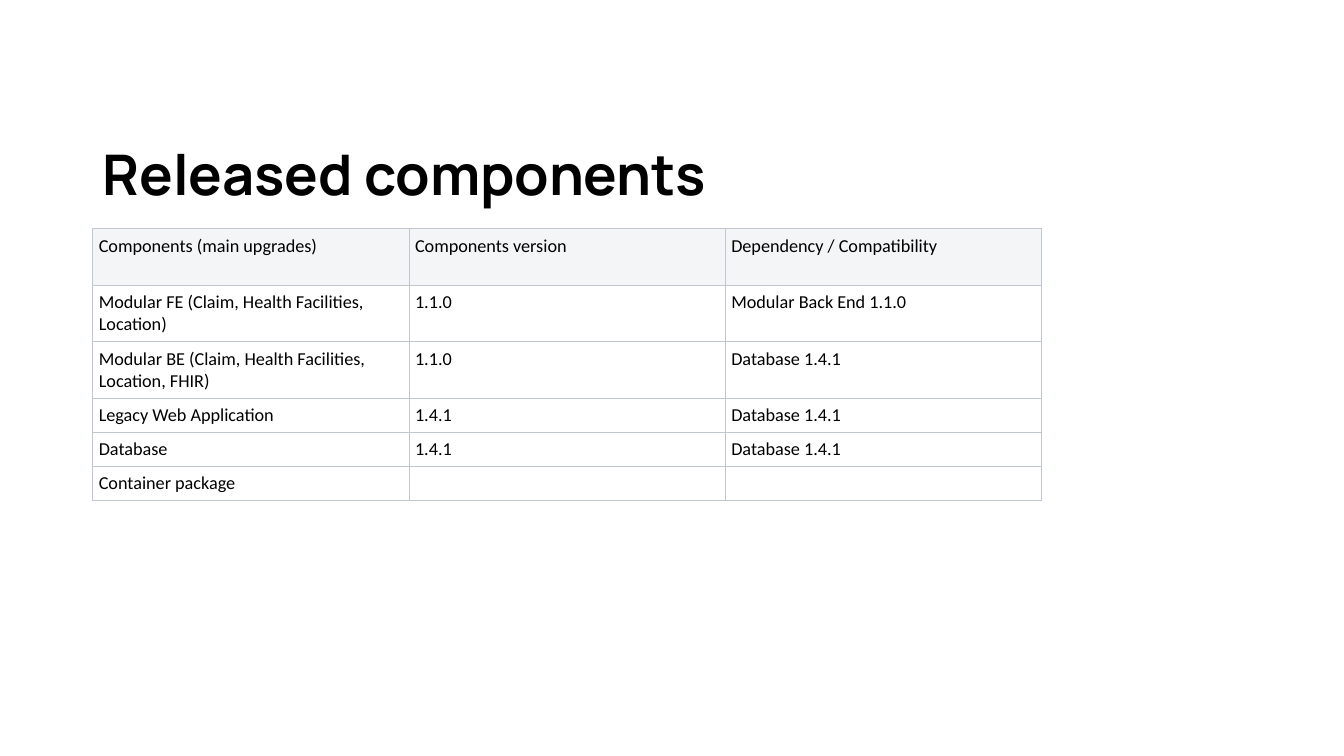
from lxml import etree
from pptx import Presentation
from pptx.dml.color import RGBColor as RGB
from pptx.enum.text import MSO_ANCHOR as Anchor
from pptx.oxml import parse_xml
from pptx.oxml.ns import nsdecls, qn
from pptx.util import Inches, Pt

COLORS = {"text": "000000", "header": "F4F5F7", "border": "C1C7D0"}

ROWS = [
    ("Components (main upgrades)", "Components version", "Dependency / Compatibility"),
    ("Modular FE (Claim, Health Facilities, Location)", "1.1.0", "Modular Back End 1.1.0"),
    ("Modular BE (Claim, Health Facilities, Location, FHIR)", "1.1.0", "Database 1.4.1"),
    ("Legacy Web Application", "1.4.1", "Database 1.4.1"),
    ("Database", "1.4.1", "Database 1.4.1"),
    ("Container package", "", ""),
]
TALL_ROWS, TALL, SHORT = 3, 0.56, 0.34


def write(tf, text, font="Calibri", size=13, bold=False, spacing=None):
    p = tf.paragraphs[0]
    if spacing:
        p.line_spacing = spacing
    if not text:
        # An empty cell keeps the text size so its row stays short
        etree.SubElement(p._p, qn("a:endParaRPr"), sz=str(size * 100))
        return
    r = p.add_run()
    r.text = text
    r.font.name, r.font.size, r.font.bold = font, Pt(size), bold
    r.font.color.rgb = RGB.from_string(COLORS["text"])


def add_borders(cell, color, width=0.75):
    tc_pr = cell._tc.get_or_add_tcPr()
    for side in "LRTB":
        tc_pr.append(parse_xml(
            f'<a:ln{side} {nsdecls("a")} w="{Pt(width)}"><a:solidFill>'
            f'<a:srgbClr val="{color}"/></a:solidFill></a:ln{side}>'))


# Title
def add_title(s, x, y, w, h):
    tf = s.shapes.add_textbox(Inches(x), Inches(y), Inches(w), Inches(h)).text_frame
    tf.word_wrap = True
    tf.vertical_anchor = Anchor.MIDDLE
    write(tf, "Released components", font="Manrope", size=40, bold=True, spacing=0.9)


# Components table
def add_components_table(s, x, y, w):
    heights = [TALL if i < TALL_ROWS else SHORT for i in range(len(ROWS))]
    frame = s.shapes.add_table(len(ROWS), len(ROWS[0]), Inches(x), Inches(y),
                               Inches(w), Inches(sum(heights)))
    table = frame.table
    table.horz_banding = table.first_row = False
    for row, height in zip(table.rows, heights):
        row.height = Inches(height)
    for i, texts in enumerate(ROWS):
        for j, text in enumerate(texts):
            cell = table.cell(i, j)
            cell.margin_left = cell.margin_right = Inches(0.06)
            cell.margin_top = cell.margin_bottom = Inches(0.06)
            add_borders(cell, COLORS["border"])
            if i == 0:
                cell.fill.solid()
                cell.fill.fore_color.rgb = RGB.from_string(COLORS["header"])
            else:
                cell.fill.background()
            write(cell.text_frame, text)


def main():
    prs = Presentation()
    prs.slide_width, prs.slide_height = Inches(13.33), Inches(7.5)
    s = prs.slides.add_slide(prs.slide_layouts[6])
    add_title(s, 0.92, 1.24, 11.5, 1.03)
    add_components_table(s, 0.92, 2.27, 9.41)
    prs.save("out.pptx")


if __name__ == "__main__":
    main()
